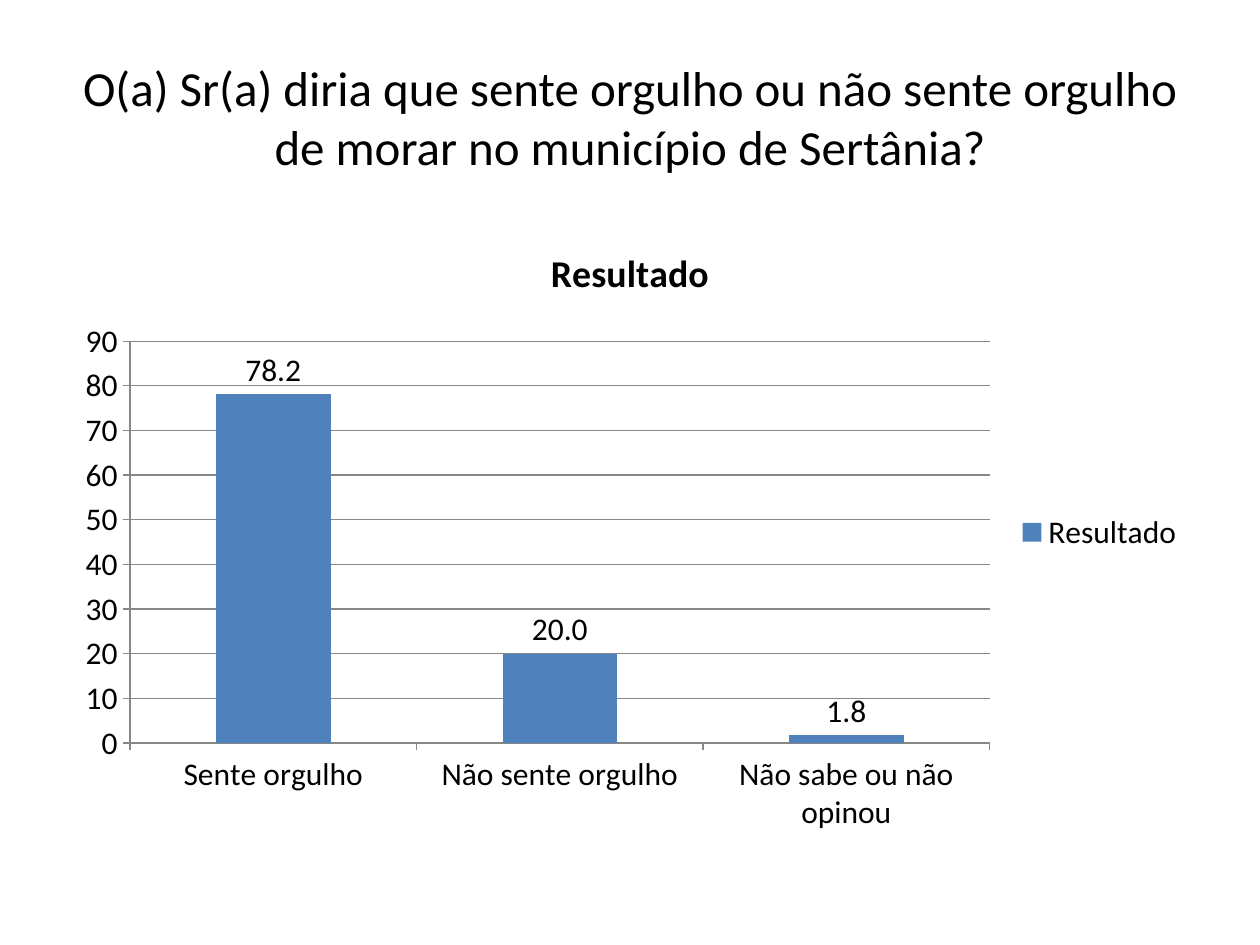
import pptx
import pptx.chart.data
import pptx.dml.color
import pptx.enum.chart
import pptx.enum.text
import pptx.util
from dataclasses import dataclass

Inches = pptx.util.Inches
Pt = pptx.util.Pt
RGBColor = pptx.dml.color.RGBColor


@dataclass(frozen=True)
class Theme:
    font: str = "Calibri"
    text: RGBColor = RGBColor(0x00, 0x00, 0x00)
    bar: RGBColor = RGBColor(0x4F, 0x81, 0xBD)
    line: RGBColor = RGBColor(0x87, 0x87, 0x87)
    title_size: Pt = Pt(28)
    chart_title_size: Pt = Pt(21.6)
    chart_size: Pt = Pt(18)


THEME = Theme()
QUESTION = (
    "O(a) Sr(a) diria que sente orgulho ou não sente orgulho "
    "de morar no município de Sertânia?"
)
SERIES_NAME = "Resultado"
RESULTS = {
    "Sente orgulho": 78.2,
    "Não sente orgulho": 20,
    "Não sabe ou não opinou": 1.8,
}


def style_font(font, size, bold=False):
    font.name = THEME.font
    font.size = size
    font.bold = bold
    font.color.rgb = THEME.text


def style_line(line):
    line.color.rgb = THEME.line
    line.width = Pt(0.75)


def add_title(page, text):
    title = page.shapes.title
    title.left, title.top = Inches(0.5), Inches(0.3)
    title.width, title.height = Inches(9), Inches(1.25)
    frame = title.text_frame
    frame.text = text
    frame.word_wrap = True
    frame.vertical_anchor = pptx.enum.text.MSO_ANCHOR.MIDDLE
    para = frame.paragraphs[0]
    para.alignment = pptx.enum.text.PP_ALIGN.CENTER
    style_font(para.font, THEME.title_size)


def style_axes(chart):
    for axis in (chart.category_axis, chart.value_axis):
        axis.major_tick_mark = pptx.enum.chart.XL_TICK_MARK.OUTSIDE
        axis.minor_tick_mark = pptx.enum.chart.XL_TICK_MARK.NONE
        style_line(axis.format.line)
    values = chart.value_axis
    values.minimum_scale, values.maximum_scale = 0, 90
    values.major_unit = 10
    values.has_major_gridlines = True
    style_line(values.major_gridlines.format.line)
    values.tick_labels.number_format = "0"
    values.tick_labels.number_format_is_linked = False


def style_bars(plot):
    plot.gap_width = 150
    plot.vary_by_categories = False
    series = plot.series[0]
    series.format.fill.solid()
    series.format.fill.fore_color.rgb = THEME.bar
    labels = series.data_labels
    labels.show_value = True
    labels.number_format = "0.0"
    labels.number_format_is_linked = False
    labels.position = pptx.enum.chart.XL_LABEL_POSITION.OUTSIDE_END
    style_font(labels.font, THEME.chart_size)


def add_results_chart(page):
    data = pptx.chart.data.CategoryChartData(number_format="0.0")
    data.categories = list(RESULTS)
    data.add_series(SERIES_NAME, list(RESULTS.values()))
    chart = page.shapes.add_chart(
        pptx.enum.chart.XL_CHART_TYPE.COLUMN_CLUSTERED,
        Inches(0.5), Inches(1.75), Inches(9), Inches(4.95), data,
    ).chart
    style_font(chart.font, THEME.chart_size)
    chart.has_title = True
    chart.chart_title.include_in_layout = False
    heading = chart.chart_title.text_frame
    heading.text = SERIES_NAME
    style_font(heading.paragraphs[0].font, THEME.chart_title_size, bold=True)
    chart.has_legend = True
    chart.legend.position = pptx.enum.chart.XL_LEGEND_POSITION.RIGHT
    chart.legend.include_in_layout = False
    style_axes(chart)
    style_bars(chart.plots[0])


def main():
    deck = pptx.Presentation()
    deck.slide_width, deck.slide_height = Inches(10), Inches(7.5)
    page = deck.slides.add_slide(deck.slide_layouts.get_by_name("Title Only"))
    add_title(page, QUESTION)
    add_results_chart(page)
    deck.save("out.pptx")


if __name__ == "__main__":
    main()
